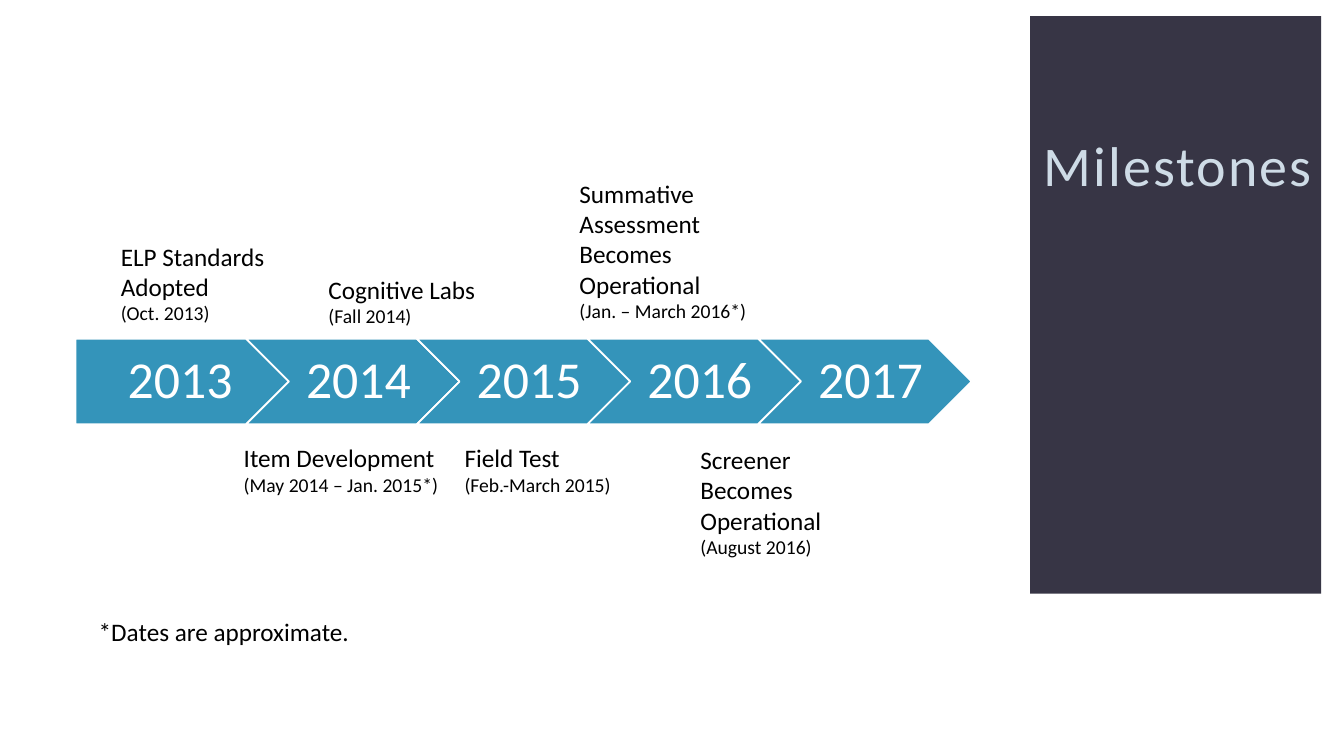
"""Build the Milestones timeline slide."""
from pptx import Presentation
from pptx.dml.color import RGBColor
from pptx.enum import shapes, text
from pptx.util import Pt

COLOURS = {"panel": "373545", "title": "CEDBE6", "arrow": "3494BA", "white": "FFFFFF", "black": "000000"}
FONT = "Calibri"
TITLE = "Milestones"
YEARS = ["2013", "2014", "2015", "2016", "2017"]
# Each milestone: heading, date, (left, top, width, height), wraps
MILESTONES = [
    ("ELP Standards Adopted", "(Oct. 2013)", (79.2, 168.5, 122.4, 67.7), True),
    ("Summative Assessment Becomes Operational", "(Jan. – March 2016*)", (406.8, 123.8, 151.9, 111.6), True),
    ("Field Test", "(Feb.-March 2015)", (324.7, 312.5, 121, 46.1), False),
    ("Item Development", "(May 2014 – Jan. 2015*)", (167, 312.5, 157.7, 46.1), False),
    ("Screener Becomes Operational", "(August 2016)", (493.2, 313.9, 131.8, 90), True),
    ("Cognitive Labs", "(Fall 2014)", (227.5, 192.2, 121.7, 46.1), True),
    ("*Dates are approximate.", "", (63.4, 437, 198, 28.8), False),
]
ARROW_LEFT, ARROW_TOP, ARROW_WIDTH, ARROW_HEIGHT = 54, 242, 152.4, 61
ARROW_PITCH = 0.8 * ARROW_WIDTH


def colour(name):
    return RGBColor.from_string(COLOURS[name])


def points(values):
    return [Pt(value) for value in values]


def add_run(paragraph, words, size, colour_name):
    run = paragraph.add_run()
    run.text = words
    run.font.name = FONT
    run.font.size = Pt(size)
    run.font.color.rgb = colour(colour_name)
    return run


def set_insets(frame, left, top, right, bottom):
    frame.margin_left, frame.margin_top, frame.margin_right, frame.margin_bottom = points((left, top, right, bottom))


def add_title(slide):
    title = slide.shapes.title
    title.left, title.top, title.width, title.height = points((738, 13, 206.6, 131.8))
    frame = title.text_frame
    frame.auto_size = text.MSO_AUTO_SIZE.NONE
    frame.vertical_anchor = text.MSO_ANCHOR.BOTTOM
    set_insets(frame, 0, 3.6, 0, 3.6)
    heading = frame.paragraphs[0]
    heading.alignment = text.PP_ALIGN.CENTER
    heading.line_spacing = 0.85
    run = add_run(heading, TITLE, 40, "title")
    run.font._element.set("spc", "150")

    panel = slide.shapes.add_shape(shapes.MSO_SHAPE.RECTANGLE, *points((735.8, 11.5, 208, 412.6)))
    panel.shadow.inherit = False
    panel.fill.solid()
    panel.fill.fore_color.rgb = colour("panel")
    panel.line.fill.background()
    title._element.addprevious(panel._element)


def add_timeline(slide):
    timeline = slide.shapes.add_group_shape()
    for index, year in enumerate(YEARS):
        outline = shapes.MSO_SHAPE.CHEVRON if index else shapes.MSO_SHAPE.PENTAGON
        place = (ARROW_LEFT + index * ARROW_PITCH, ARROW_TOP, ARROW_WIDTH, ARROW_HEIGHT)
        arrow = timeline.shapes.add_shape(outline, *points(place))
        arrow.shadow.inherit = False
        arrow.fill.solid()
        arrow.fill.fore_color.rgb = colour("arrow")
        arrow.line.color.rgb = colour("white")
        arrow.line.width = Pt(1.25)
        frame = arrow.text_frame
        frame.word_wrap = False
        frame.vertical_anchor = text.MSO_ANCHOR.MIDDLE
        set_insets(frame, 11.5 if index else 15.8, 8, 3.6, 8)
        label = frame.paragraphs[0]
        label.alignment = text.PP_ALIGN.CENTER
        label.line_spacing = 0.9
        add_run(label, year, 37, "white")


def add_milestone(slide, heading, date, place, wraps):
    frame = slide.shapes.add_textbox(*points(place)).text_frame
    frame.word_wrap = wraps
    frame.auto_size = text.MSO_AUTO_SIZE.SHAPE_TO_FIT_TEXT
    add_run(frame.paragraphs[0], heading, 18, "black")
    if date:
        add_run(frame.add_paragraph(), date, 14, "black")


def main():
    deck = Presentation()
    deck.slide_width, deck.slide_height = points((960, 540))
    slide = deck.slides.add_slide(deck.slide_layouts[5])
    slide.background.fill.solid()
    slide.background.fill.fore_color.rgb = colour("white")
    add_title(slide)
    add_timeline(slide)
    for milestone in MILESTONES:
        add_milestone(slide, *milestone)
    deck.save("out.pptx")


if __name__ == "__main__":
    main()
